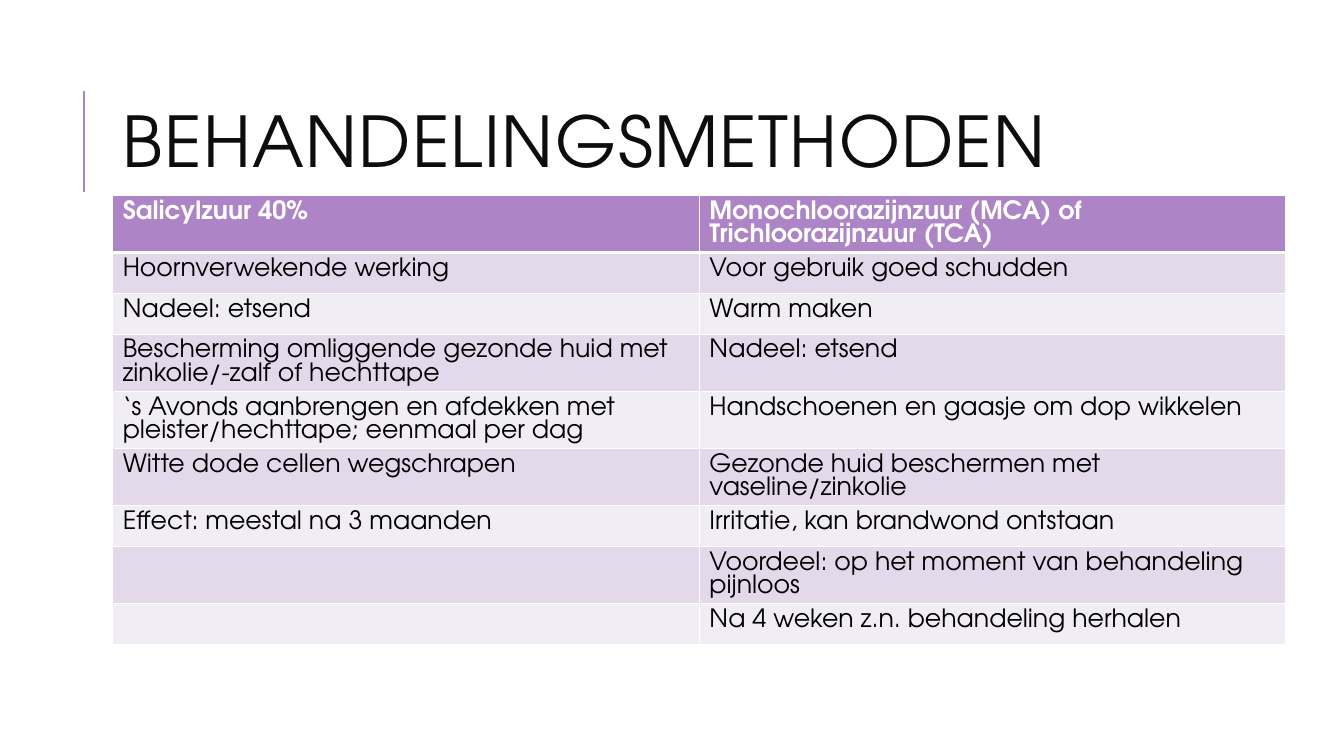
from dataclasses import dataclass

from lxml.etree import SubElement
from pptx import Presentation
from pptx.dml.color import RGBColor
from pptx.enum.shapes import MSO_CONNECTOR
from pptx.enum.text import MSO_ANCHOR, MSO_AUTO_SIZE, PP_ALIGN
from pptx.oxml.ns import qn
from pptx.util import Cm, Pt


@dataclass(frozen=True)
class Theme:
    font: str = "TeX Gyre Adventor"
    accent: str = "AD84C6"
    bands: tuple = ("E3D9EA", "F1EDF5")
    white: str = "FFFFFF"
    black: str = "000000"
    title: str = "0D0D0D"
    title_size: int = 50
    body_size: int = 18


theme = Theme()


def write(tf, text, size=theme.body_size, color=theme.black, bold=False,
          line_spacing=None, tracking=None):
    p = tf.paragraphs[0]
    p.alignment = PP_ALIGN.LEFT
    p.line_spacing = line_spacing
    r = p.add_run()
    r.text = text
    r.font.name = theme.font
    r.font.size = Pt(size)
    r.font.bold = bold
    r.font.color.rgb = RGBColor.from_string(color)
    if tracking:
        r.font._element.set("spc", str(tracking * 100))


def add_borders(cell, **widths):
    """Draw white cell borders; widths are points, keyed by L, R, T and B."""
    for side, width in widths.items():
        ln = SubElement(cell._tc.get_or_add_tcPr(), qn(f"a:ln{side}"), w=str(Pt(width)))
        fill = SubElement(ln, qn("a:solidFill"))
        SubElement(fill, qn("a:srgbClr"), val=theme.white)


rows = [
    ("Salicylzuur 40%", "Monochloorazijnzuur (MCA) of Trichloorazijnzuur (TCA)"),
    ("Hoornverwekende werking", "Voor gebruik goed schudden"),
    ("Nadeel: etsend", "Warm maken"),
    ("Bescherming omliggende gezonde huid met zinkolie/-zalf of hechttape", "Nadeel: etsend"),
    ("‘s Avonds aanbrengen en afdekken met pleister/hechttape; eenmaal per dag",
     "Handschoenen en gaasje om dop wikkelen"),
    ("Witte dode cellen wegschrapen", "Gezonde huid beschermen met vaseline/zinkolie"),
    ("Effect: meestal na 3 maanden", "Irritatie, kan brandwond ontstaan"),
    ("", "Voordeel: op het moment van behandeling pijnloos"),
    ("", "Na 4 weken z.n. behandeling herhalen"),
]

prs = Presentation()
prs.slide_width, prs.slide_height = Cm(33.87), Cm(19.05)
s = prs.slides.add_slide(prs.slide_layouts[5])

# Accent line beside the title
line = s.shapes.add_connector(MSO_CONNECTOR.STRAIGHT, Cm(2.12), Cm(4.83), Cm(2.12), Cm(2.29))
line.line.color.rgb = RGBColor.from_string(theme.accent)
line.line.width = Pt(1.5)
SubElement(line._element.spPr, qn("a:effectLst"))

# Title
title = s.shapes.title
title.left, title.top, title.width, title.height = Cm(2.84), Cm(1.63), Cm(27), Cm(4.17)
tf = title.text_frame
tf.word_wrap = True
tf.auto_size = MSO_AUTO_SIZE.NONE
tf.vertical_anchor = MSO_ANCHOR.MIDDLE
write(tf, "BEHANDELINGSMETHODEN", size=theme.title_size, color=theme.title,
      line_spacing=0.8, tracking=1)

# Treatment table
row_height = 1.03
table = s.shapes.add_table(len(rows), 2, Cm(2.84), Cm(4.93), Cm(29.57),
                           Cm(row_height * len(rows))).table
for i, texts in enumerate(rows):
    table.rows[i].height = Cm(row_height)
    header = i == 0
    for j, text in enumerate(texts):
        cell = table.cell(i, j)
        add_borders(cell, L=1, R=1, T=3 if i == 1 else 1, B=3 if header else 1)
        cell.fill.solid()
        cell.fill.fore_color.rgb = RGBColor.from_string(
            theme.accent if header else theme.bands[(i - 1) % 2])
        if text:
            write(cell.text_frame, text, bold=header,
                  color=theme.white if header else theme.black)

prs.save("out.pptx")
